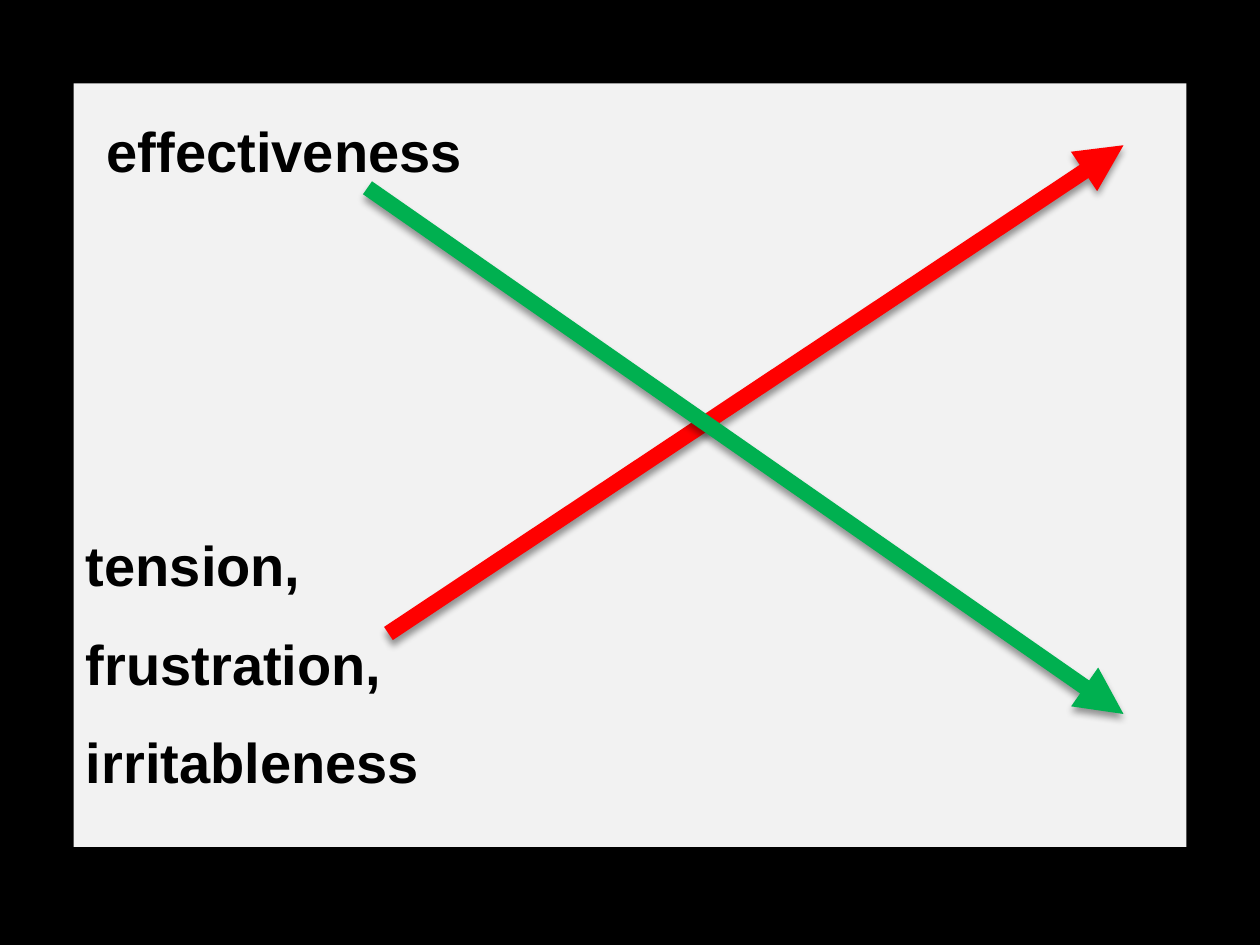
"""Build a slide where effectiveness falls as tension and frustration rise."""
from lxml import etree
from pptx import Presentation
from pptx.dml.color import RGBColor
from pptx.enum.shapes import MSO_CONNECTOR, MSO_SHAPE
from pptx.enum.text import MSO_ANCHOR, PP_ALIGN
from pptx.oxml import parse_xml
from pptx.oxml.ns import nsdecls, qn
from pptx.util import Pt

RECTANGLE = MSO_SHAPE.RECTANGLE
STRAIGHT = MSO_CONNECTOR.STRAIGHT
TOP, BOTTOM = MSO_ANCHOR.TOP, MSO_ANCHOR.BOTTOM
LEFT = PP_ALIGN.LEFT

SLIDE_SIZE = (720, 540)
BACKDROP = ((0, 0, *SLIDE_SIZE), "000000")
PANEL = ((42, 47.6, 636, 436.4), "F2F2F2")
STRAINS = ["tension,", "frustration,", "irritableness"]
EFFECT = ["effectiveness"]
EFFECT_BOX = (54, 59.8, 222, 46)
ARROWS = [
    ((222, 362), (642, 83), "FF0000"),
    ((210, 107.3), (642, 408), "00B050"),
]
FONT = {"name": "Arial", "size": Pt(32), "bold": True}
SHADOW = (
    f'<a:effectLst {nsdecls("a")}><a:outerShdw blurRad="{Pt(4)}" dist="{Pt(3)}" '
    'dir="5400000" rotWithShape="0"><a:srgbClr val="000000"><a:alpha val="40000"/>'
    "</a:srgbClr></a:outerShdw></a:effectLst>"
)


def color(value):
    return RGBColor.from_string(value)


def points(values):
    return [Pt(value) for value in values]


def add_rectangle(slide, box, fill):
    shape = slide.shapes.add_shape(RECTANGLE, *points(box))
    shape.shadow.inherit = False
    shape.fill.solid()
    shape.fill.fore_color.rgb = color(fill)
    shape.line.fill.background()
    return shape


def write_lines(shape, lines, frame_format):
    frame = shape.text_frame
    frame.word_wrap = True
    for name, value in frame_format.items():
        setattr(frame, name, value)
    frame.text = "\n".join(lines)
    for index, paragraph in enumerate(frame.paragraphs):
        paragraph.alignment = LEFT
        paragraph.space_before = Pt(18 if index else 0)
        font = paragraph.runs[0].font
        for name, value in FONT.items():
            setattr(font, name, value)
        font.color.rgb = color("000000")


def add_arrow(slide, start, end, line_color):
    arrow = slide.shapes.add_connector(STRAIGHT, *points(start + end))
    arrow.line.width = Pt(9)
    arrow.line.color.rgb = color(line_color)
    line = arrow.line._get_or_add_ln()
    etree.SubElement(line, qn("a:tailEnd"), type="triangle")
    line.getparent().append(parse_xml(SHADOW))


def main():
    presentation = Presentation()
    presentation.slide_width, presentation.slide_height = points(SLIDE_SIZE)
    slide = presentation.slides.add_slide(presentation.slide_layouts[6])
    add_rectangle(slide, *BACKDROP)
    panel = add_rectangle(slide, *PANEL)
    write_lines(panel, STRAINS, {"vertical_anchor": BOTTOM, "margin_bottom": Pt(29.6)})
    for arrow in ARROWS:
        add_arrow(slide, *arrow)
    label = slide.shapes.add_textbox(*points(EFFECT_BOX))
    write_lines(label, EFFECT, {"vertical_anchor": TOP, "margin_top": Pt(6.6)})
    presentation.save("out.pptx")


if __name__ == "__main__":
    main()
